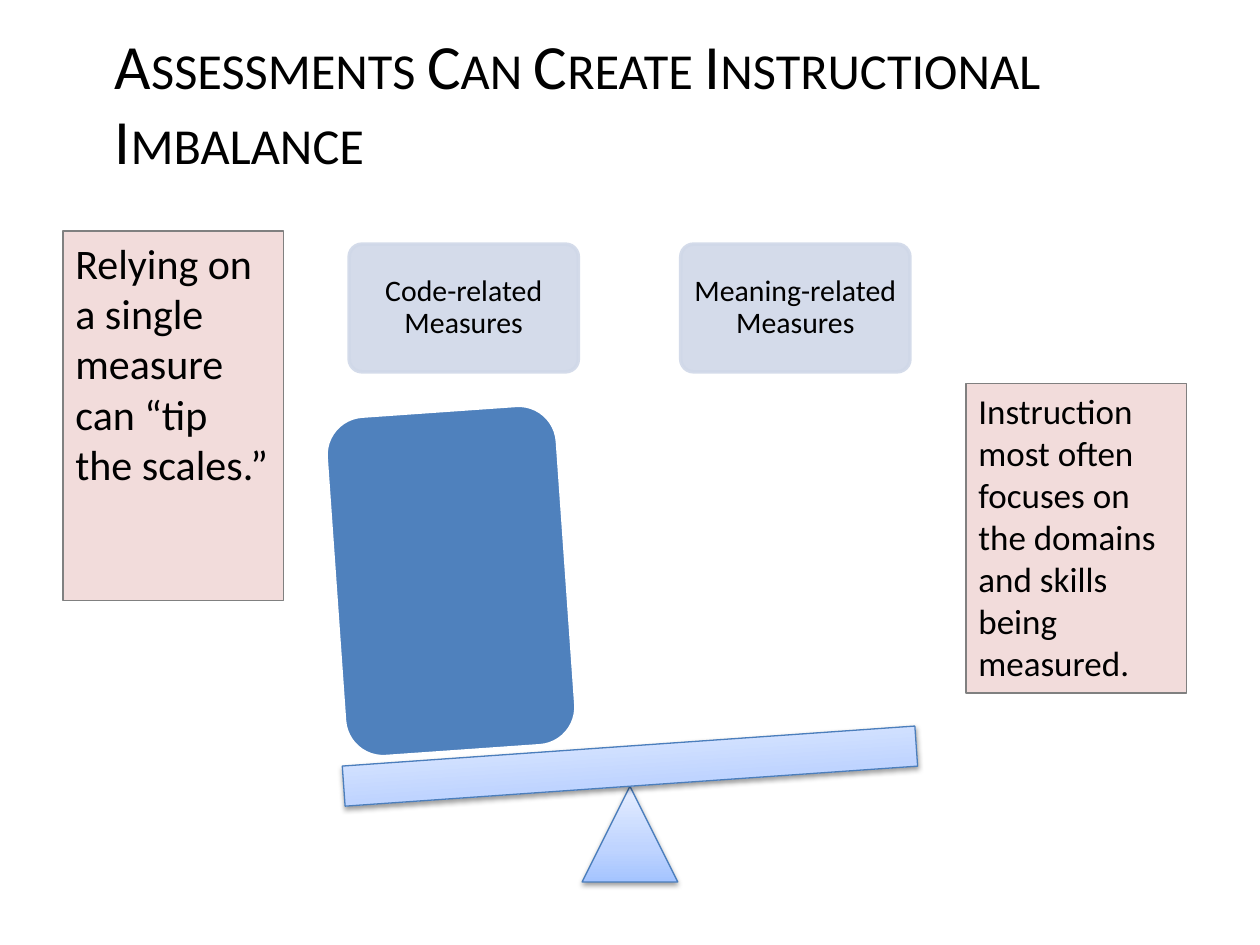
from pptx import Presentation
from pptx.dml.color import RGBColor
from pptx.enum.shapes import MSO_SHAPE
from pptx.enum.text import MSO_ANCHOR, PP_ALIGN
from pptx.oxml import parse_xml
from pptx.util import Pt

NS = 'xmlns:a="http://schemas.openxmlformats.org/drawingml/2006/main"'
STOPS = ((0, "A4C4FF"), (35, "BFD4FF"), (100, "E6EEFF"))


def color(code):
    return RGBColor.from_string(code)


def write(shape, text, size, align=PP_ALIGN.LEFT, anchor=MSO_ANCHOR.TOP,
          inset=None, spacing=None, caps=False):
    frame = shape.text_frame
    frame.word_wrap = True
    frame.vertical_anchor = anchor
    if inset is not None:
        frame.margin_left = frame.margin_right = Pt(inset)
        frame.margin_top = frame.margin_bottom = Pt(inset)
    para = frame.paragraphs[0]
    para.alignment = align
    if spacing:
        para.line_spacing = spacing
    run = para.add_run()
    run.text = text
    run.font.size = Pt(size)
    run.font.name = "Calibri"
    run.font.color.rgb = color("000000")
    if caps:
        run._r.get_or_add_rPr().set("cap", "small")


def draw(slide, kind, box, line, width, fill=None, turn=0, round=None):
    shape = slide.shapes.add_shape(kind, *[Pt(v) for v in box])
    shape.shadow.inherit = False
    shape.rotation = turn
    if round is not None:
        shape.adjustments[0] = round
    if fill:
        shape.fill.solid()
        shape.fill.fore_color.rgb = color(fill)
    shape.line.color.rgb = color(line)
    shape.line.width = Pt(width)
    return shape


def fade(shape):
    """Light blue gradient, darkest at the bottom, with a soft shadow."""
    shape.fill.gradient()
    shape.fill.gradient_angle = 90
    stops = "".join(f'<a:gs pos="{pos * 1000}"><a:srgbClr val="{code}"/></a:gs>'
                    for pos, code in STOPS)
    props = shape._element.spPr
    old = props.find(".//{*}gsLst")
    old.getparent().replace(old, parse_xml(f"<a:gsLst {NS}>{stops}</a:gsLst>"))
    props.find("{*}effectLst").append(parse_xml(
        f'<a:outerShdw {NS} blurRad="{Pt(3.1)}" dist="{Pt(1.6)}" dir="5400000" '
        'rotWithShape="0"><a:srgbClr val="000000"><a:alpha val="38000"/>'
        '</a:srgbClr></a:outerShdw>'))


def title(slide, box, text):
    shape = slide.shapes.add_textbox(*[Pt(v) for v in box])
    write(shape, text, 36, anchor=MSO_ANCHOR.MIDDLE, caps=True)


def cards(slide, box, labels):
    left, top, width, height = box
    wide = 131
    step = (width - wide) / (len(labels) - 1)
    for i, label in enumerate(labels):
        card = draw(slide, MSO_SHAPE.ROUNDED_RECTANGLE,
                    (left + i * step, top, wide, height),
                    "D0D8E8", 2, "D0D8E8", round=0.1)
        for tint in card._element.spPr.iterfind(".//{*}srgbClr"):
            tint.append(parse_xml(f'<a:alpha {NS} val="90000"/>'))
        write(card, label, 17, PP_ALIGN.CENTER, MSO_ANCHOR.MIDDLE, 5, 0.9)


def scale(slide, box):
    left, top, width, height = box
    tilt, base, beam = 356, 54.7, 23
    mid = left + width / 2
    # Pivot and beam
    fade(draw(slide, MSO_SHAPE.ISOSCELES_TRIANGLE,
              (mid - base / 2, top + height - base, base, base), "4B7EBC", 0.75))
    fade(draw(slide, MSO_SHAPE.RECTANGLE,
              (left, top + height - base - beam, width, beam),
              "4B7EBC", 0.75, turn=tilt))
    # Weight on the lower end
    draw(slide, MSO_SHAPE.ROUNDED_RECTANGLE, (left - 4.5, top, 132.5, 195),
         "FFFFFF", 2, "4F81BD", tilt)


def note(slide, box, text, size):
    shape = draw(slide, MSO_SHAPE.RECTANGLE, box, "808080", 0.75, "F2DCDB")
    write(shape, text, size)


def main():
    deck = Presentation()
    deck.slide_width, deck.slide_height = Pt(720), Pt(540)
    slide = deck.slides.add_slide(deck.slide_layouts[6])
    title(slide, (58.5, 25.5, 619, 65.5),
          "Assessments Can Create Instructional Imbalance")
    cards(slide, (199.5, 139.5, 320.5, 73),
          ("Code-related Measures", "Meaning-related Measures"))
    scale(slide, (196, 234.5, 328, 269.5))
    note(slide, (36, 132, 126, 211),
         "Relying on a single measure can “tip the scales.”", 24)
    note(slide, (552, 219, 126, 177),
         "Instruction most often focuses on the domains and skills being measured.", 20)
    deck.save("out.pptx")


if __name__ == "__main__":
    main()
